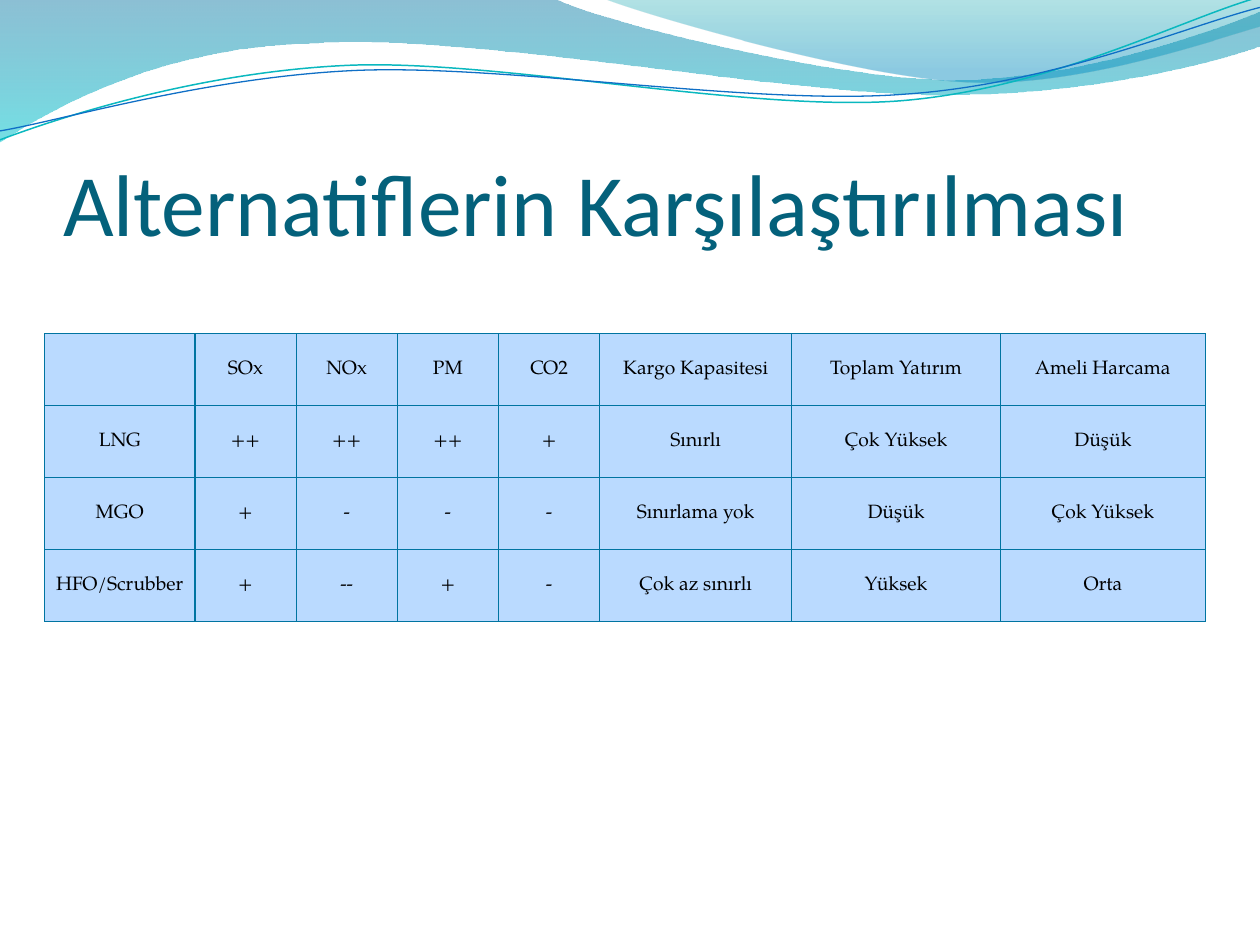
from lxml.etree import SubElement
from pptx import Presentation
from pptx.dml.color import RGBColor
from pptx.enum.text import MSO_ANCHOR as Anchor, MSO_AUTO_SIZE as AutoSize, PP_ALIGN as Align
from pptx.oxml.ns import qn
from pptx.util import Cm, Pt

TITLE_COLOR = RGBColor(0x04, 0x61, 0x7B)
TEXT_COLOR = RGBColor(0x00, 0x00, 0x00)
CELL_COLOR = RGBColor(0xBA, 0xDA, 0xFF)
BORDER_COLOR = RGBColor(0x00, 0x74, 0xA1)
AQUA = RGBColor(0x00, 0xC6, 0xCF)
GREEN = RGBColor(0x00, 0xA1, 0xA9)
SKY = RGBColor(0x00, 0x8B, 0xBF)
TEAL = RGBColor(0x0A, 0xB8, 0xBF)
BLUE = RGBColor(0x0F, 0x6F, 0xC6)

# Outlines in cm: two numbers are a corner, six are a cubic curve.
WIDE_WAVE = [
    (0, 0), (11.18, -0.03),
    (12.09, 0.43, 16.87, 1.6, 19.25, 1.6), (21.67, 1.6, 24.33, 0.66, 25.4, 0.23),
    (25.43, 0.91),
    (24.97, 1.12, 22.1, 1.93, 18.95, 1.91), (15.8, 1.91, 9.7, 0.71, 6.53, 0.86),
    (3.28, 0.91, 1.17, 2.11, -0.03, 2.87), (0, 0),
]
RIGHT_WAVE = [
    (12.17, -0.03),
    (12.93, 0.28, 17.32, 1.57, 19.53, 1.65), (21.74, 1.75, 24.41, 0.81, 25.4, 0.53),
    (25.4, 0), (12.17, -0.03),
]
# The two thin curves are given before their rotation.
CURVE_ROTATION = 357.3
TEAL_CURVE = [
    (-0.05, 2.22),
    (1.19, 1.82, 4.02, 1.04, 7.05, 1.05), (10.05, 1.07, 15.02, 2.37, 18.08, 2.29),
    (21.13, 2.2, 23.86, 0.91, 25.41, 0.55),
]
BLUE_CURVE = [
    (-0.04, 2.04),
    (1.16, 1.9, 4.17, 1.15, 7.2, 1.16), (10.25, 1.18, 15.13, 2.25, 18.19, 2.16),
    (21.21, 2.1, 23.93, 1.06, 25.45, 0.75),
]

COLUMN_WIDTHS = [3.03] + [2.04] * 4 + [3.87, 4.21, 4.13]
ROW_HEIGHT = 1.45
ROWS = [
    ["", "SOx", "NOx", "PM", "CO2", "Kargo Kapasitesi", "Toplam Yatırım", "Ameli Harcama"],
    ["LNG", "++", "++", "++", "+", "Sınırlı", "Çok Yüksek", "Düşük"],
    ["MGO", "+", "-", "-", "-", "Sınırlama yok", "Düşük", "Çok Yüksek"],
    ["HFO/Scrubber", "+", "--", "+", "-", "Çok az sınırlı", "Yüksek", "Orta"],
]


class SlideBuilder:
    title_font = "Calibri"
    table_font = "TeX Gyre Pagella"

    def __init__(self, slide):
        self.slide = slide

    def outline(self, outline, close):
        """Build a freeform through all points, then join each curve's three lines into one."""
        points = [
            (Cm(part[i]), Cm(part[i + 1])) for part in outline for i in range(0, len(part), 2)
        ]
        builder = self.slide.shapes.build_freeform(*points[0])
        builder.add_line_segments(points[1:], close=close)
        shape = builder.convert_to_shape()
        shape.shadow.inherit = False
        lines = iter(list(shape._element.spPr.iter(qn("a:lnTo"))))
        for part in outline[1:]:
            line = next(lines)
            if len(part) == 6:
                line.addprevious(curve := line.makeelement(qn("a:cubicBezTo")))
                for segment in (line, next(lines), next(lines)):
                    curve.append(segment[0])
                    segment.getparent().remove(segment)
        return shape

    def wave(self, outline, stops):
        """Fill an outline downwards; each stop is position, colour, opacity in percent."""
        shape = self.outline(outline, close=True)
        shape.line.fill.background()
        shape.fill.gradient()
        shape.fill.gradient_angle = 270
        for stop, (position, color, _) in zip(shape.fill.gradient_stops, stops):
            stop.position = position
            stop.color.rgb = color
        for element, (_, _, opacity) in zip(shape._element.spPr.iter(qn("a:srgbClr")), stops):
            SubElement(element, qn("a:alpha"), val=str(opacity * 1000))

    def curve(self, outline, color, width):
        shape = self.outline(outline, close=False)
        shape.rotation = CURVE_ROTATION
        shape.fill.background()
        shape.line.color.rgb = color
        shape.line.width = Pt(width)

    def title(self, text, left, top, width, height):
        title = self.slide.shapes.title
        self.slide.shapes._spTree.append(title._element)  # in front of the waves
        title.left, title.top, title.width, title.height = map(Cm, (left, top, width, height))
        frame = title.text_frame
        frame.text = text
        frame.word_wrap = True
        frame.auto_size = AutoSize.NONE
        frame.vertical_anchor = Anchor.BOTTOM
        frame.margin_left = frame.margin_right = frame.margin_bottom = 0
        frame.margin_top = Cm(0.13)
        paragraph = frame.paragraphs[0]
        paragraph.alignment = Align.LEFT
        self.font(paragraph, self.title_font, 50, TITLE_COLOR)

    def font(self, paragraph, name, size, color):
        paragraph.font.name = name
        paragraph.font.size = Pt(size)
        paragraph.font.color.rgb = color

    def table(self, rows, left, top, widths, row_height):
        table = self.slide.shapes.add_table(
            len(rows), len(widths), Cm(left), Cm(top),
            Cm(sum(widths)), Cm(row_height * len(rows)),
        ).table
        table.first_row = table.horz_banding = False
        for column, width in zip(table.columns, widths):
            column.width = Cm(width)
        for row, texts in zip(table.rows, rows):
            row.height = Cm(row_height)
            for cell, text in zip(row.cells, texts):
                self.cell(cell, text)

    def cell(self, cell, text):
        cell.text = text
        cell.vertical_anchor = Anchor.MIDDLE
        cell.margin_left = cell.margin_right = cell.margin_top = Cm(0.02)
        cell.margin_bottom = 0
        paragraph = cell.text_frame.paragraphs[0]
        paragraph.alignment = Align.CENTER
        self.font(paragraph, self.table_font, 11, TEXT_COLOR)
        properties = cell._tc.get_or_add_tcPr()
        for side in ("lnL", "lnR", "lnT", "lnB"):
            border = SubElement(properties, qn(f"a:{side}"), w=str(Pt(0.75)))
            fill = SubElement(border, qn("a:solidFill"))
            SubElement(fill, qn("a:srgbClr"), val=str(BORDER_COLOR))
        cell.fill.solid()
        cell.fill.fore_color.rgb = CELL_COLOR


def main():
    presentation = Presentation()
    presentation.slide_width, presentation.slide_height = Cm(25.4), Cm(19.05)
    builder = SlideBuilder(presentation.slides.add_slide(presentation.slide_layouts[5]))
    builder.wave(WIDE_WAVE, [(0, BORDER_COLOR, 45), (1, AQUA, 55)])
    builder.wave(RIGHT_WAVE, [(0, GREEN, 30), (0.8, SKY, 45)])
    builder.curve(TEAL_CURVE, TEAL, 0.85)
    builder.curve(BLUE_CURVE, BLUE, 0.75)
    builder.title("Alternatiflerin Karşılaştırılması", 1.27, 1.95, 22.86, 3.18)
    builder.table(ROWS, 0.9, 6.73, COLUMN_WIDTHS, ROW_HEIGHT)
    presentation.save("out.pptx")


if __name__ == "__main__":
    main()
